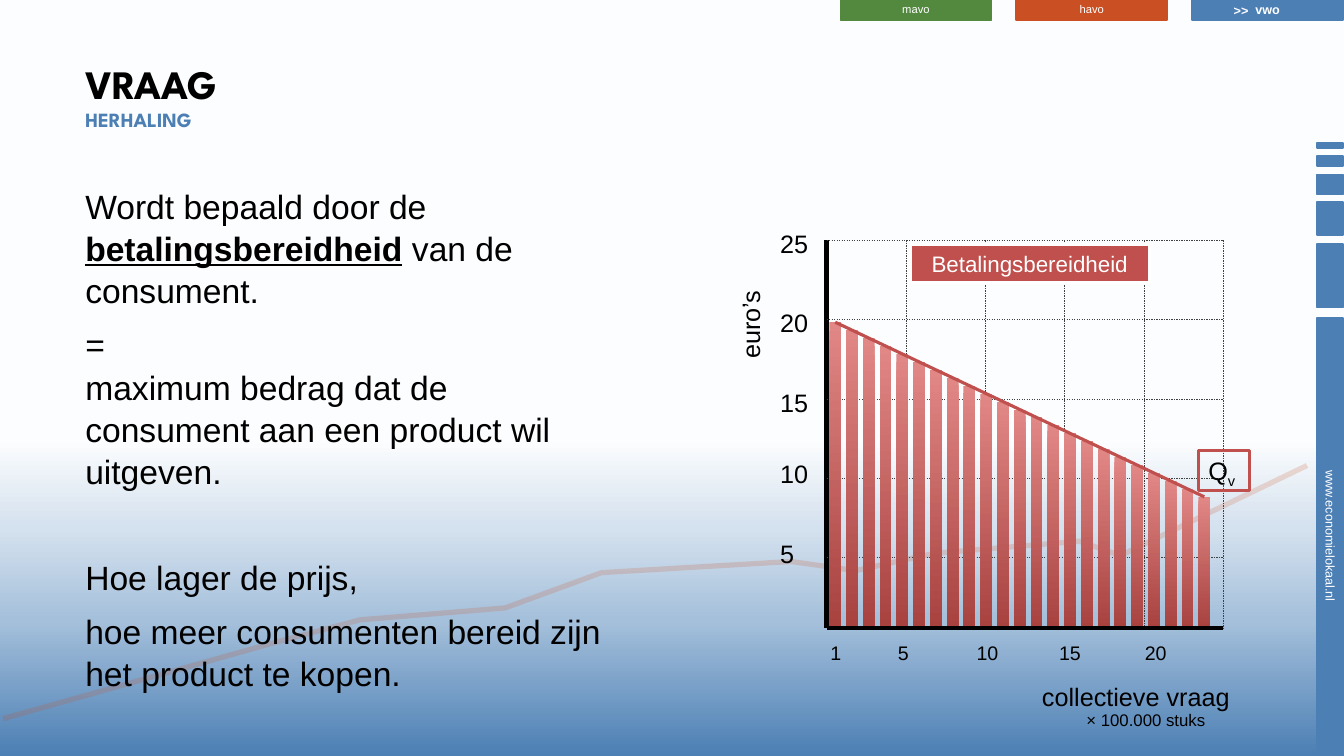
from dataclasses import dataclass, field
from typing import Any, Optional

from lxml.etree import SubElement
from pptx import Presentation
from pptx.dml.color import RGBColor
from pptx.enum.dml import MSO_LINE
from pptx.enum.shapes import MSO_CONNECTOR, MSO_SHAPE
from pptx.enum.text import MSO_ANCHOR, MSO_AUTO_SIZE, PP_ALIGN
from pptx.oxml.ns import qn
from pptx.util import Cm, Pt

BLUE = RGBColor(0x4C, 0x7F, 0xB4)
ORANGE = RGBColor(0xCA, 0x4F, 0x22)
GREEN = RGBColor(0x52, 0x89, 0x3F)
RED = RGBColor(0xC0, 0x50, 0x4D)
GREY = RGBColor(0x40, 0x40, 0x40)
BLACK = RGBColor(0, 0, 0)
WHITE = RGBColor(0xFF, 0xFF, 0xFF)
SKY = [(0, BLUE), (18, RGBColor(0xA5, 0xC0, 0xDB)), (30, RGBColor(0xD4, 0xE1, 0xEE)),
       (42, RGBColor(0xFC, 0xFD, 0xFE)), (50, WHITE)]
BAR_SHADES = [(0, RGBColor(0xE1, 0x87, 0x85)), (100, RGBColor(0xA7, 0x42, 0x3F))]

GRID_LEFT, GRID_TOP, GRID_STEP = 20.83, 6.05, 2
GRID_RIGHT = GRID_LEFT + 5 * GRID_STEP
AXIS_BOTTOM = 15.83
BAR_COUNT = 23
BAR_PITCH = 9.3 / (BAR_COUNT - 1)

TAB_MARGINS = {"margin_top": 0, "margin_bottom": Cm(0.03)}
FIT_LINE = {"word_wrap": False, "auto_size": MSO_AUTO_SIZE.SHAPE_TO_FIT_TEXT}
FIT_WRAPPED = {"word_wrap": True, "auto_size": MSO_AUTO_SIZE.SHAPE_TO_FIT_TEXT}


@dataclass
class Span:
    text: str
    size: float
    color: RGBColor = BLACK
    name: str = "Arial"
    format: dict[str, Any] = field(default_factory=dict)
    baseline: int = 0


@dataclass
class Box:
    left: float
    top: float
    width: float
    height: float
    rotation: float = 0


@dataclass
class SchoolTab:
    label: str
    color: RGBColor
    size: float
    bold: bool = False


@dataclass
class SideBlock:
    middle: float
    length: float
    label: str = ""


@dataclass
class AxisLabel:
    text: str
    place: float


def set_values(target: Any, values: dict[str, Any]) -> None:
    for key, value in values.items():
        setattr(target, key, value)


def set_gradient(fill: Any, owner: Any, stops: list, angle: float) -> None:
    """Give fill a gradient; angle counts counter-clockwise."""
    fill.gradient()
    fill.gradient_angle = angle
    stop_list = owner.find(".//" + qn("a:gsLst"))
    for old in list(stop_list):
        stop_list.remove(old)
    for percent, color in stops:
        stop = SubElement(stop_list, qn("a:gs"), pos=str(percent * 1000))
        SubElement(stop, qn("a:srgbClr"), val=str(color))


def add_spans(paragraph: Any, spans: list[Span]) -> None:
    for span in spans:
        for number, part in enumerate(span.text.split("\n")):
            if number:
                paragraph.add_line_break()
            if not part:
                continue
            run = paragraph.add_run()
            run.text = part
            set_values(run.font, {"size": Pt(span.size), "name": span.name, **span.format})
            run.font.color.rgb = span.color
            if span.baseline:
                run.font._element.set("baseline", str(span.baseline * 1000))


def add_text(slide: Any, box: Box, spans: list[Span], frame: dict[str, Any]) -> Any:
    text_box = slide.shapes.add_textbox(Cm(box.left), Cm(box.top), Cm(box.width), Cm(box.height))
    text_box.rotation = box.rotation
    set_values(text_box.text_frame, frame)
    add_spans(text_box.text_frame.paragraphs[0], spans)
    return text_box


def add_block(slide: Any, box: Box, fill: Optional[RGBColor] = None,
              line: Optional[RGBColor] = None, weight: float = 1.25) -> Any:
    block = slide.shapes.add_shape(MSO_SHAPE.RECTANGLE, Cm(box.left), Cm(box.top),
                                   Cm(box.width), Cm(box.height))
    block.rotation = box.rotation
    block.shadow.inherit = False
    if fill is None:
        block.fill.background()
    else:
        block.fill.solid()
        block.fill.fore_color.rgb = fill
    if line is None:
        block.line.fill.background()
    else:
        block.line.color.rgb = line
        block.line.width = Pt(weight)
    return block


def label_block(block: Any, spans: list[Span], frame: dict[str, Any], align: Any = PP_ALIGN.CENTER) -> None:
    set_values(block.text_frame, frame)
    block.text_frame.paragraphs[0].alignment = align
    add_spans(block.text_frame.paragraphs[0], spans)


def add_line(slide: Any, start: tuple, end: tuple, color: RGBColor, weight: float,
             dash: Any = None) -> Any:
    line = slide.shapes.add_connector(MSO_CONNECTOR.STRAIGHT, *map(Cm, start + end))
    line.line.color.rgb = color
    set_values(line.line, {"width": Pt(weight), "dash_style": dash})
    SubElement(line._element.spPr, qn("a:effectLst"))
    return line


def draw_frame(slide: Any) -> None:
    """Draw the background, school tabs, side strip and faint trend line."""
    set_gradient(slide.background.fill, slide._element, SKY, 90)
    for block in [SideBlock(13.51, 11, "www.economielokaal.nl"), SideBlock(6.95, 1.6),
                  SideBlock(5.51, 0.84), SideBlock(4.65, 0.51), SideBlock(4.06, 0.25),
                  SideBlock(3.66, 0.13)]:
        box = Box(33.52 - block.length / 2, block.middle - 0.33, block.length, 0.66, 90)
        strip = add_block(slide, box, BLUE, BLUE)
        if block.label:
            label_block(strip, [Span(block.label, 9, WHITE)], TAB_MARGINS)
    for column, tab in enumerate([SchoolTab("mavo", GREEN, 8), SchoolTab("havo", ORANGE, 8),
                                  SchoolTab("vwo", BLUE, 9, True)]):
        shape = add_block(slide, Box(21.18 + 4.43 * column, 0, 3.81, 0.51), tab.color, tab.color)
        label_block(shape, [Span(tab.label, tab.size, WHITE, format={"bold": tab.bold})], TAB_MARGINS)

    trend = [(32.94, 11.73), (28.24, 14), (27.2, 13.64), (23.57, 13.94), (21.56, 14.38), (19.94, 14.15),
             (15.16, 14.43), (12.73, 15.32), (9.07, 15.62), (6.86, 16.21), (0.08, 18.11)]
    points = [(Cm(x), Cm(y)) for x, y in trend]
    builder = slide.shapes.build_freeform(*points[0])
    builder.add_line_segments(points[1:], close=False)
    trend_line = builder.convert_to_shape()
    trend_line.shadow.inherit = False
    trend_line.fill.background()
    trend_line.line.color.rgb = ORANGE
    trend_line.line.width = Pt(3.75)
    SubElement(trend_line.line._ln.find(".//" + qn("a:srgbClr")), qn("a:alpha"), val="19000")
    add_text(slide, Box(30.84, -0.05, 0.89, 0.64), [Span(">>", 9, WHITE, format={"bold": True})], FIT_LINE)


def draw_text(slide: Any) -> None:
    bold = {"bold": True}
    add_text(slide, Box(1.9, 1.27, 25.45, 2.26),
             [Span("VRAAG\n", 28.8, BLACK, "League Spartan", bold),
              Span("HERHALING", 14.4, BLUE, "League Spartan", bold)],
             {"word_wrap": True, "vertical_anchor": MSO_ANCHOR.MIDDLE})
    body = add_text(slide, Box(1.9, 4.5, 13.72, 13.08),
                    [Span("Wordt bepaald door de ", 24),
                     Span("betalingsbereidheid", 24, format={"bold": True, "underline": True}),
                     Span(" van de consument.", 24)], {"word_wrap": True}).text_frame
    for text, gap in [("=\nmaximum bedrag dat de consument aan een product wil uitgeven.", 5),
                      ("Hoe lager de prijs,", 42),
                      ("hoe meer consumenten bereid zijn het product te kopen.", 5)]:
        paragraph = body.add_paragraph()
        paragraph.space_before = Pt(gap)
        add_spans(paragraph, [Span(text, 24)])
    for paragraph in body.paragraphs:
        set_values(paragraph, {"space_after": Pt(3.4), "line_spacing": 1.05})


def draw_graph(slide: Any) -> None:
    add_line(slide, (GRID_LEFT, GRID_TOP), (GRID_LEFT, AXIS_BOTTOM), BLACK, 3)
    for step in range(5):
        y = GRID_TOP + GRID_STEP * step
        x = GRID_LEFT + GRID_STEP * (step + 1)
        add_line(slide, (GRID_LEFT, y), (GRID_RIGHT, y), GREY, 0.25, MSO_LINE.DASH)
        add_line(slide, (x, GRID_TOP), (x, AXIS_BOTTOM), GREY, 0.25, MSO_LINE.DASH)
    add_text(slide, Box(26.01, 17.04, 6.02, 1.02), [Span("collectieve vraag", 18)], FIT_LINE)
    add_text(slide, Box(17.7, 7.57, 2.41, 1.02, 270), [Span("euro’s", 18)], FIT_LINE)
    for price in [AxisLabel("5", 13.44), AxisLabel("10", 11.43), AxisLabel("15", 9.63),
                  AxisLabel("20", 7.62), AxisLabel("25", 5.64)]:
        width = 0.5 + 0.36 * len(price.text)
        add_text(slide, Box(19.41, price.place, width, 1.02), [Span(price.text, 18)], FIT_LINE)

    bars = []
    for number in range(BAR_COUNT):
        top = 8.12 + 0.2 * number
        bar = add_block(slide, Box(20.9 + BAR_PITCH * number, top, 0.3, AXIS_BOTTOM - top))
        set_gradient(bar.fill, bar._element, BAR_SHADES, 270)
        bars.append(bar)
    for quantity in [AxisLabel("1", 20.68), AxisLabel("5", 22.38), AxisLabel("10", 24.36),
                     AxisLabel("15", 26.44), AxisLabel("20", 28.6)]:
        width = 0.51 + 0.28 * len(quantity.text)
        add_text(slide, Box(quantity.place, 16.03, width, 0.86), [Span(quantity.text, 14)], FIT_LINE)

    heading = add_block(slide, Box(22.94, 6.17, 6.02, 0.94), RED, WHITE, 2.25)
    label_block(heading, [Span("Betalingsbereidheid", 16, WHITE)],
                {**FIT_WRAPPED, "vertical_anchor": MSO_ANCHOR.TOP})
    add_line(slide, (GRID_RIGHT, AXIS_BOTTOM), (GRID_LEFT, AXIS_BOTTOM), BLACK, 3)
    demand = add_line(slide, (21.05, 8.12), (30.35, 12.52), RED, 2.25)
    demand.begin_connect(bars[0], 0)
    demand.end_connect(bars[-1], 0)
    demand_label = add_block(slide, Box(30.2, 11.35, 1.3, 1.02), None, RED, 2.25)
    label_block(demand_label, [Span("Q", 18), Span("v", 18, baseline=-25)],
                {**FIT_LINE, "vertical_anchor": MSO_ANCHOR.TOP}, PP_ALIGN.LEFT)
    add_text(slide, Box(27.13, 17.75, 3.51, 0.76), [Span("× 100.000 stuks", 12)], FIT_WRAPPED)


def main() -> None:
    deck = Presentation()
    set_values(deck, {"slide_width": Cm(33.87), "slide_height": Cm(19.05)})
    slide = deck.slides.add_slide(deck.slide_layouts[6])
    draw_frame(slide)
    draw_text(slide)
    draw_graph(slide)
    deck.save("out.pptx")


if __name__ == "__main__":
    main()
